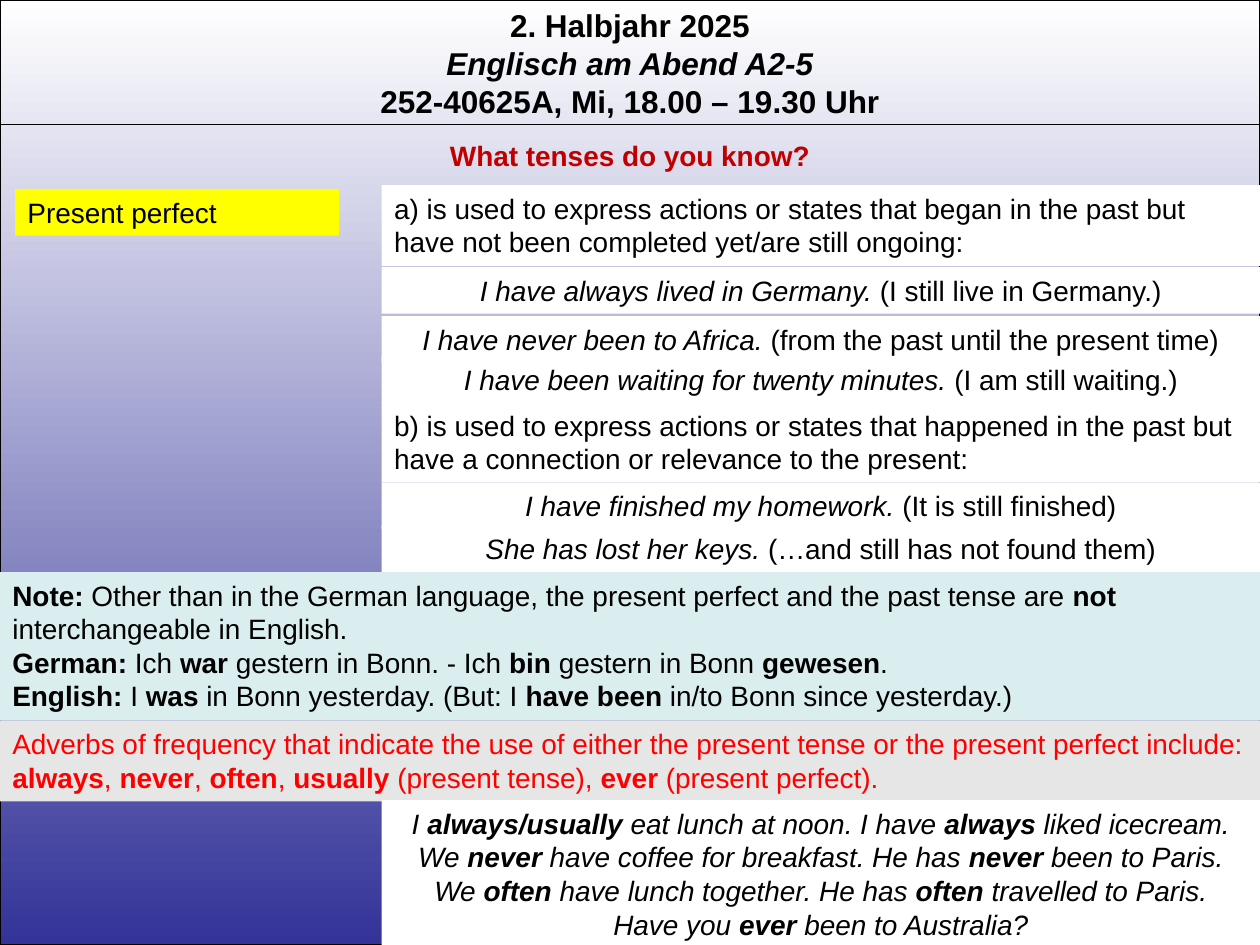
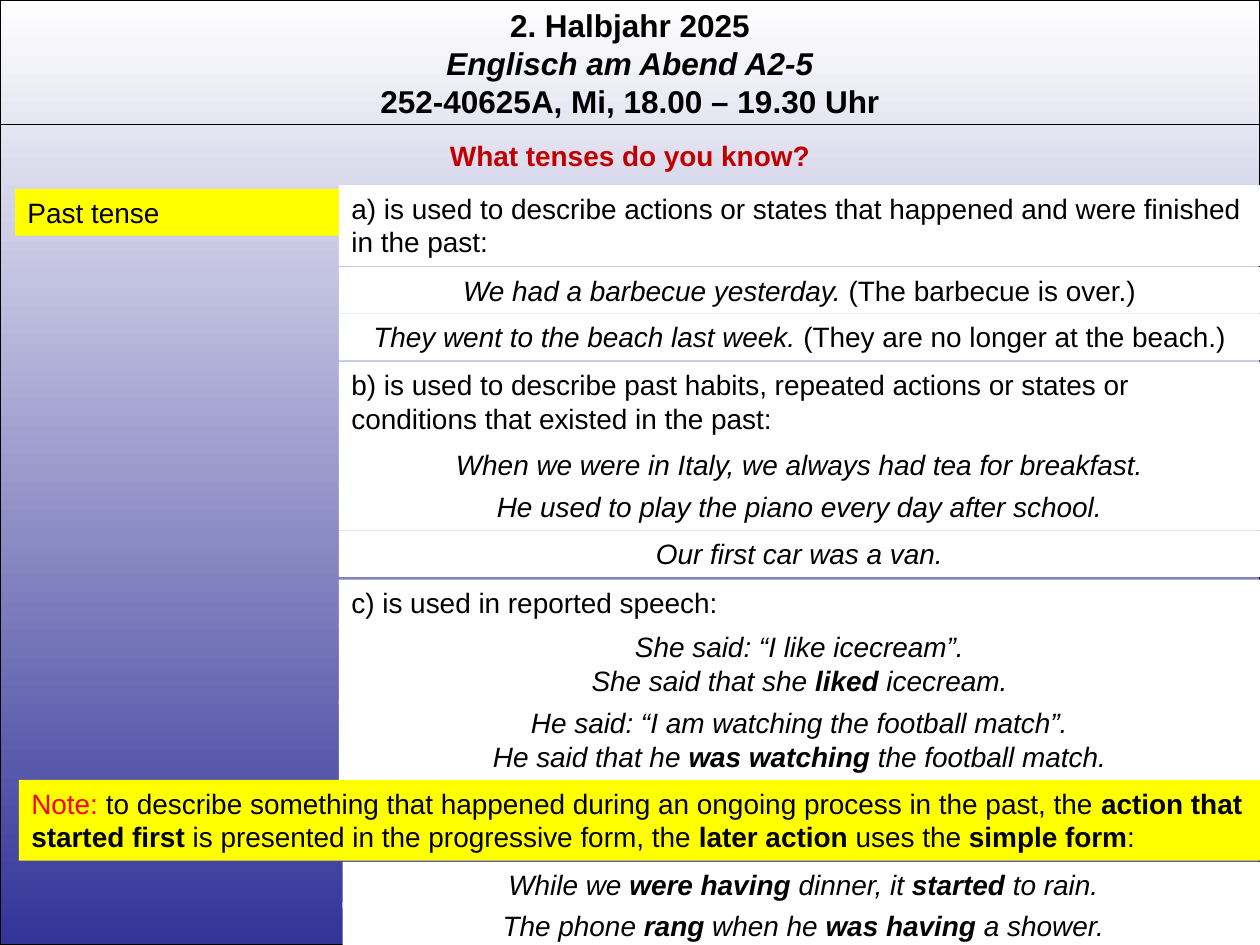
from pptx import Presentation
from pptx.dml.color import RGBColor
from pptx.enum.shapes import MSO_CONNECTOR, MSO_SHAPE
from pptx.enum.text import MSO_ANCHOR, MSO_AUTO_SIZE, PP_ALIGN
from pptx.oxml.ns import qn
from pptx.util import Inches, Pt
from lxml.etree import SubElement

FONT = "Arial"
BLACK, WHITE, RED, DARK_RED = "000000", "FFFFFF", "FF0000", "C00000"
YELLOW, MINT, GREY, INDIGO = "FFFF00", "DAEDEF", "E6E6E6", "333399"
MARKS = {"*": "bold", "_": "italic", "~": "red"}

HEADER = ["*2. Halbjahr 2025", "*_Englisch am Abend A2-5", "*252-40625A, Mi, 18.00 – 19.30 Uhr"]
QUESTION = "*What tenses do you know?"

# Marks in the text switch a style on and off: * bold, _ italic, ~ red.
SLIDES = [
    {
        "tense": "Present perfect",
        "column": (3.03, 6.97),
        "boxes": [
            ("rule", 1.47, 2, ["a) is used to express actions or states that began in the past but have not been completed yet/are still ongoing:"]),
            ("example", 2.12, 1, ["_I have always lived in Germany. _(I still live in Germany.)"]),
            ("example", 2.83, 1, ["_I have been waiting for twenty minutes. _(I am still waiting.)"]),
            ("example", 2.51, 1, ["_I have never been to Africa. _(from the past until the present time)"]),
            ("rule", 3.19, 2, ["b) is used to express actions or states that happened in the past but have a connection or relevance to the present:"]),
            ("example", 3.83, 1, ["_I have finished my homework. _(It is still finished)"]),
            ("example", 4.17, 1, ["_She has lost her keys. _(…and still has not found them)"]),
            ("example", 6.35, 4, [
                "_I *always/usually *eat lunch at noon. I have *always *liked icecream.",
                "_We *never *have coffee for breakfast. He has *never *been to Paris.",
                "_We *often *have lunch together. He has *often *travelled to Paris.",
                "_Have you *ever *been to Australia?",
            ]),
        ],
        "notes": [
            (0, 4.54, 10, 4, MINT, [
                "*Note: *Other than in the German language, the present perfect and the past tense are *not* interchangeable in English.",
                "*German: *Ich *war *gestern in Bonn. - Ich *bin *gestern in Bonn *gewesen*.",
                "*English: *I *was* in Bonn yesterday. (But: I *have been* in/to Bonn since yesterday.)",
            ]),
            (0, 5.72, 10.04, 2, GREY, [
                "~Adverbs of frequency that indicate the use of either the present tense or the present perfect include:",
                "~*always*, *never*, *often*, *usually* (present tense), *ever* (present perfect).",
            ]),
        ],
    },
    {
        "tense": "Past tense",
        "column": (2.69, 7.31),
        "boxes": [
            ("rule", 1.47, 2, ["a) is used to describe actions or states that happened and were finished in the past:"]),
            ("example", 2.12, 1, ["_We had a barbecue yesterday. _(The barbecue is over.)"]),
            ("example", 2.49, 1, ["_They went to the beach last week. _(They are no longer at the beach.)"]),
            ("rule", 2.87, 2, ["b) is used to describe past habits, repeated actions or states or conditions that existed in the past:"]),
            ("example", 3.5, 1, ["_When we were in Italy, we always had tea for breakfast."]),
            ("example", 3.84, 1, ["_He used to play the piano every day after school."]),
            ("example", 4.21, 1, ["_Our first car was a van."]),
            ("rule", 4.6, 1, ["c) is used in reported speech:"]),
            ("example", 4.95, 2, ["_She said: “I like icecream”.", "_She said that she *liked *icecream."]),
            ("example", 5.55, 2, ["_He said: “I am watching the football match”.", "_He said that he *was watching *the football match."]),
            ("late", 6.84, 1, ["_While we *were having *dinner, it *started *to rain."]),
            ("late", 7.16, 1, ["_The phone *rang *when he *was having *a shower."]),
        ],
        "notes": [
            (0.15, 6.19, 9.85, 2, YELLOW, [
                "~Note: ~to describe something that happened during an ongoing process in the past, the *action that started first *is presented in the progressive form, the *later action *uses the *simple form*:",
            ]),
        ],
    },
]


def rgb(value):
    return RGBColor.from_string(value)


def split_runs(line):
    styles, text = set(), ""
    for ch in line:
        if ch not in MARKS:
            text += ch
            continue
        if text:
            yield text, set(styles)
        styles ^= {MARKS[ch]}
        text = ""
    yield text, styles


def write(shape, lines, size=16, align=PP_ALIGN.LEFT, color=BLACK):
    tf = shape.text_frame
    tf.word_wrap = True
    tf.auto_size = MSO_AUTO_SIZE.SHAPE_TO_FIT_TEXT
    tf.vertical_anchor = MSO_ANCHOR.TOP
    tf.margin_left = tf.margin_right = Inches(0.1)
    tf.margin_top = tf.margin_bottom = Inches(0.05)
    for i, line in enumerate(lines):
        p = tf.add_paragraph() if i else tf.paragraphs[0]
        p.alignment = align
        for text, styles in split_runs(line):
            r = p.add_run()
            r.text = text
            r.font.name, r.font.size = FONT, Pt(size)
            r.font.bold, r.font.italic = "bold" in styles, "italic" in styles
            r.font.color.rgb = rgb(RED if "red" in styles else color)


def add_box(s, x, y, w, rows, fill, lines, align=PP_ALIGN.LEFT):
    height = 0.1 + 0.27 * rows
    box = s.shapes.add_shape(MSO_SHAPE.RECTANGLE, Inches(x), Inches(y), Inches(w), Inches(height))
    box.shadow.inherit = False
    box.fill.solid()
    box.fill.fore_color.rgb = rgb(fill)
    box.line.fill.background()
    write(box, lines, align=align)


def set_background(prs):
    fill = prs.slide_master.background.fill
    fill.gradient()
    fill.gradient_angle = 270
    for stop, color in zip(fill.gradient_stops, (WHITE, INDIGO)):
        stop.color.rgb = rgb(color)


def add_frame(s, prs):
    frame = s.shapes.add_shape(MSO_SHAPE.RECTANGLE, 0, 0, prs.slide_width, prs.slide_height)
    frame.shadow.inherit = False
    frame.fill.background()
    header = s.shapes.add_textbox(0, 0, prs.slide_width, Inches(1.01))
    write(header, HEADER, 18, PP_ALIGN.CENTER)
    rule = s.shapes.add_connector(MSO_CONNECTOR.STRAIGHT, 0, Inches(0.99), prs.slide_width, Inches(0.99))
    SubElement(rule._element.spPr, qn("a:effectLst"))
    for outlined in (frame, rule):
        outlined.line.color.rgb = rgb(BLACK)
        outlined.line.width = Pt(0.75)
    title = s.shapes.title
    title.left, title.top, title.width, title.height = 0, Inches(1.05), prs.slide_width, Inches(0.37)
    write(title, [QUESTION], 16, PP_ALIGN.CENTER, DARK_RED)


def add_tense_slide(prs, content):
    s = prs.slides.add_slide(prs.slide_layouts[5])
    add_frame(s, prs)
    add_box(s, 0.12, 1.5, 2.57, 1, YELLOW, [content["tense"]])
    x, w = content["column"]
    for left, top, width, rows, fill, lines in content["notes"]:
        add_box(s, left, top, width, rows, fill, lines)
    for kind, top, rows, lines in content["boxes"]:
        left = x + 0.03 if kind == "late" else x
        align = PP_ALIGN.LEFT if kind == "rule" else PP_ALIGN.CENTER
        add_box(s, left, top, w, rows, WHITE, lines, align)


def main():
    prs = Presentation()
    prs.slide_width, prs.slide_height = Inches(10), Inches(7.5)
    set_background(prs)
    for content in SLIDES:
        add_tense_slide(prs, content)
    prs.save("out.pptx")


if __name__ == "__main__":
    main()
